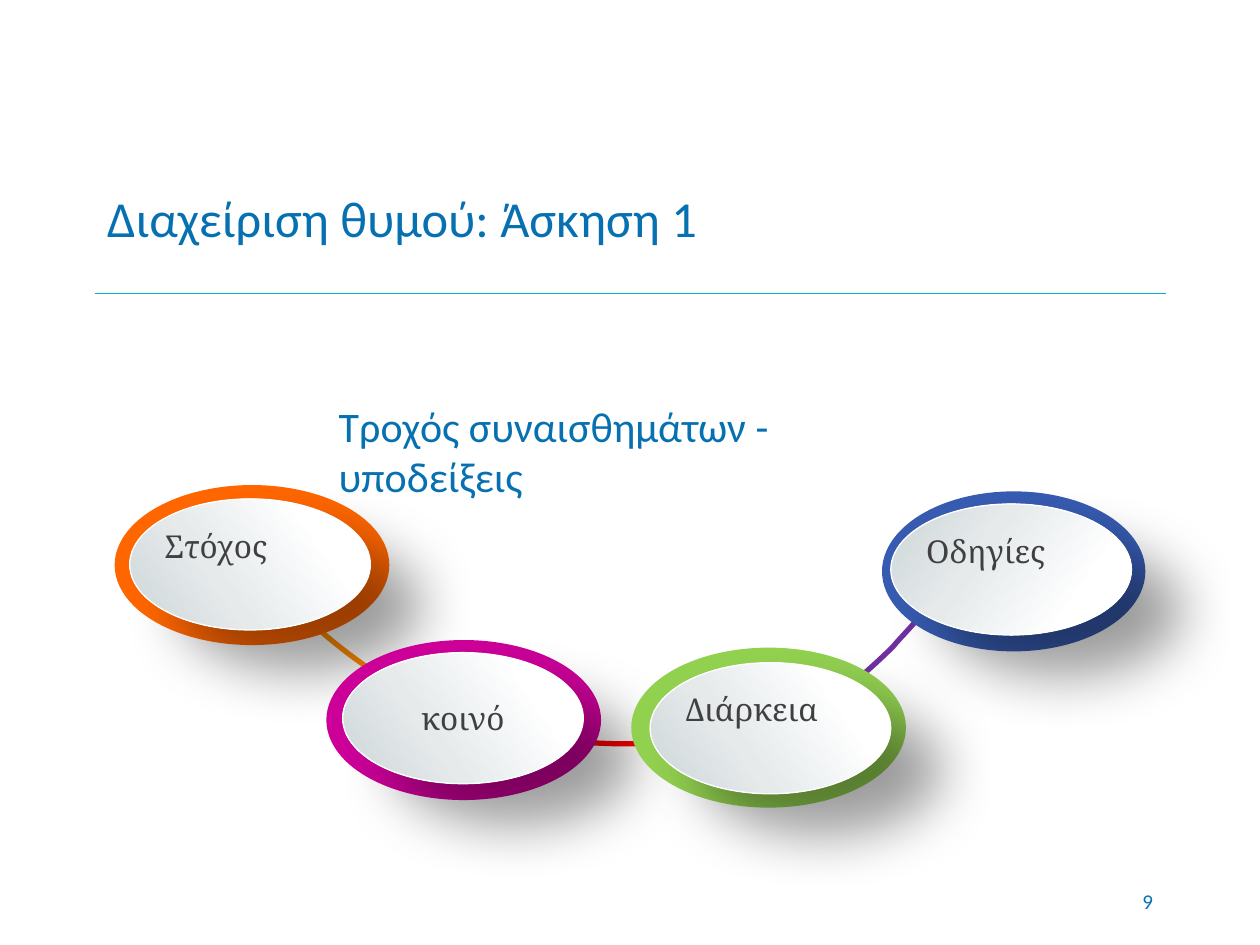
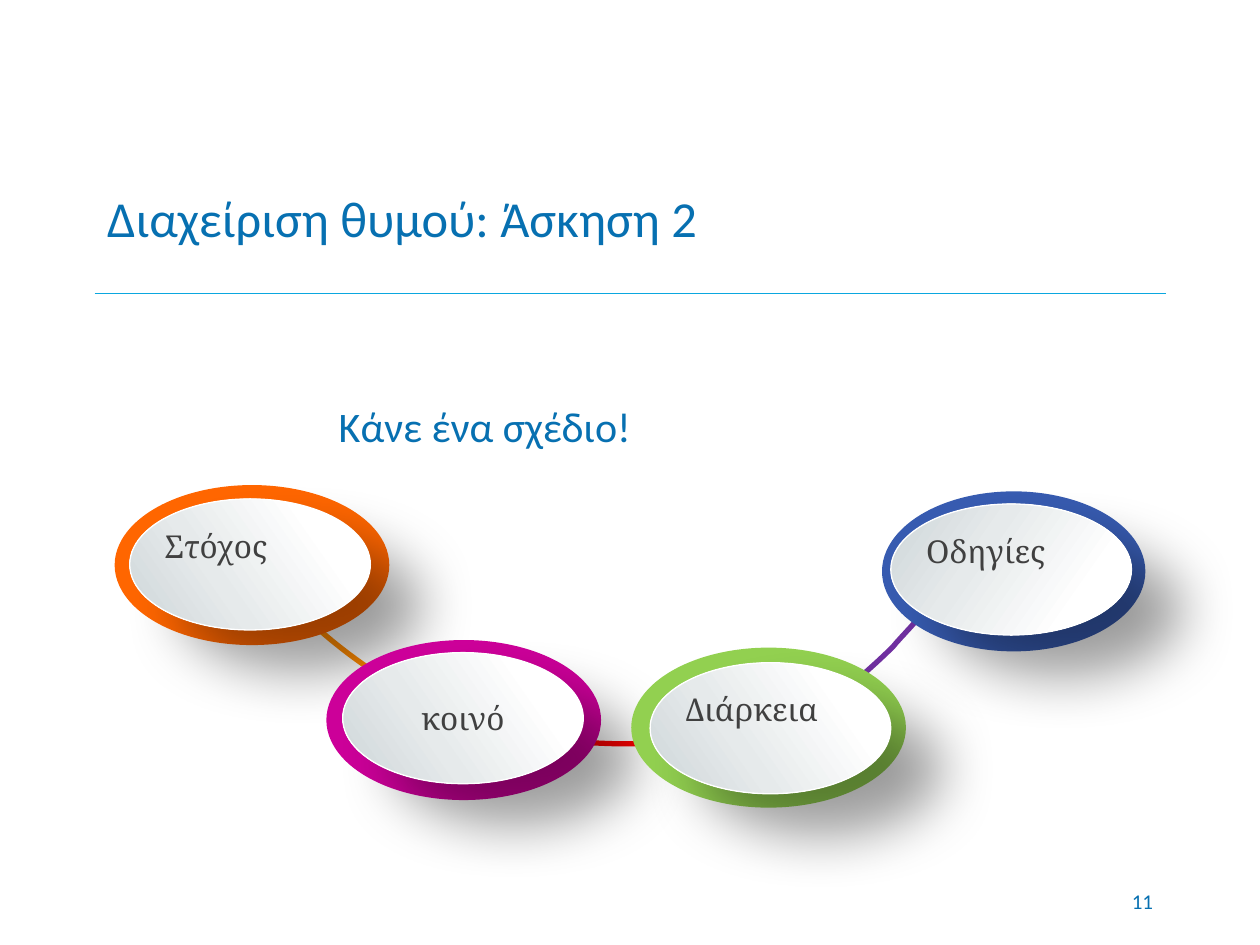
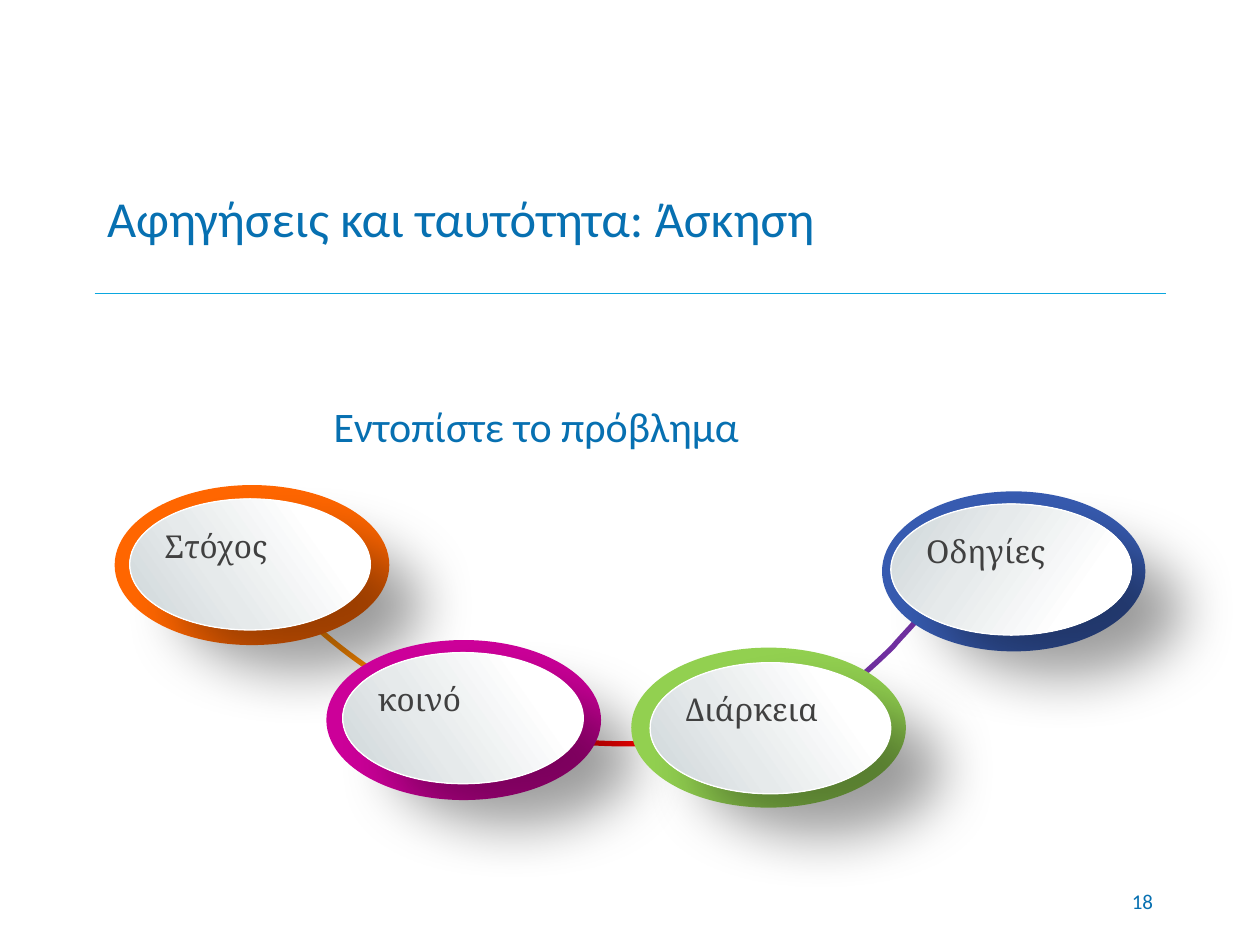
from dataclasses import dataclass

from lxml.etree import SubElement
from pptx import Presentation
from pptx.dml.color import RGBColor
from pptx.enum.shapes import MSO_CONNECTOR, MSO_SHAPE
from pptx.enum.text import MSO_ANCHOR, PP_ALIGN
from pptx.oxml.ns import qn
from pptx.util import Inches, Pt


@dataclass(frozen=True)
class Theme:
    heading: str = "0770B1"
    rule: str = "0BA7DF"
    label: str = "404040"
    white: str = "FFFFFF"
    shadow: str = "000000"
    heading_font: str = "Calibri"
    label_font: str = "Cambria"
    title_size: float = 28.8
    subtitle_size: float = 24
    label_size: float = 18
    number_size: float = 12


THEME = Theme()
# Gradient of an oval face: position in percent, colour
FACE_STOPS = [(0, "CDD5D8"), (37, "E6EAEB"), (77, "FFFFFF"), (100, "FFFFFF")]
FACE_SIZE = (1.91, 1.04)
CURVE_STEPS = 12

# Each link: colour, start point, then cubic segments (two controls and an end)
LINKS_BACK = [
    ("7030A0", (7.26, 4.94), [((7.2, 5.01), (7.13, 5.08), (7.09, 5.13)),
                              ((6.96, 5.26), (6.82, 5.38), (6.68, 5.5))]),
    ("7030A0", (6.68, 5.49), [((6.5, 5.61), (6.31, 5.71), (6.1, 5.79))]),
]
LINKS_FRONT = [
    ("FF0000", (4.49, 5.88), [((4.71, 5.9), (4.93, 5.91), (5.15, 5.9)),
                              ((5.26, 5.89), (5.37, 5.88), (5.48, 5.86))]),
    ("FF8A00", (2.47, 4.94), [((2.68, 5.14), (2.94, 5.32), (3.22, 5.5))]),
]
# Each oval: label, rim colour, rim box, face corner, mirrored
INSTRUCTIONS = ("Οδηγίες", "375BB0", (7, 3.9, 2.09, 1.27), (7.07, 4), False)
STEPS = [
    ("Στόχος", "FF6600", (0.91, 3.85, 2.18, 1.27), (1.03, 3.96), True),
    ("κοινό", "CC0099", (2.59, 5.08, 2.18, 1.27), (2.72, 5.18), True),
    ("Διάρκεια", "92D050", (5.01, 5.14, 2.18, 1.27), (5.16, 5.26), True),
]
# Links and ovals from back to front
WHEEL = [*LINKS_BACK, INSTRUCTIONS, *LINKS_FRONT, *STEPS]

# Each exercise: title, subtitle, subtitle box, page number, centred labels
EXERCISES = [
    ("Διαχείριση θυμού: Άσκηση 1", "Τροχός συναισθημάτων - υποδείξεις",
     (2.59, 3.13, 4.87, 1.55), "9", ["κοινό"]),
    ("Διαχείριση θυμού: Άσκηση 2", "Κάνε ένα σχέδιο!",
     (2.59, 3.13, 4.87, 1.09), "11", ["κοινό"]),
    ("Αφηγήσεις και ταυτότητα: Άσκηση", "Εντοπίστε το πρόβλημα",
     (2.55, 3.13, 4.87, 1.09), "18", []),
]


def write(shape, text, size, font=THEME.heading_font, color=THEME.heading,
          align=PP_ALIGN.LEFT, anchor=MSO_ANCHOR.MIDDLE,
          insets=(0.1, 0.05, 0.1, 0.05)):
    """Insets are left, top, right and bottom, in inches."""
    frame = shape.text_frame
    frame.word_wrap = True
    frame.vertical_anchor = anchor
    (frame.margin_left, frame.margin_top,
     frame.margin_right, frame.margin_bottom) = map(Inches, insets)
    paragraph = frame.paragraphs[0]
    paragraph.alignment = align
    run = paragraph.add_run()
    run.text = text
    run.font.size = Pt(size)
    run.font.name = font
    run.font.color.rgb = RGBColor.from_string(color)


def style_face(face, mirrored):
    """Give an oval face its gradient, white edge and soft shadow."""
    face.fill.gradient()
    face.fill.gradient_angle = 325
    stops = FACE_STOPS
    if mirrored:
        stops = [(100 - position, color) for position, color in reversed(stops)]
        face._element.spPr.xfrm.set("flipH", "1")
    stop_list = face._element.spPr.find(".//" + qn("a:gsLst"))
    for default_stop in list(stop_list):
        stop_list.remove(default_stop)
    for position, color in stops:
        stop = SubElement(stop_list, qn("a:gs"), pos=str(position * 1000))
        SubElement(stop, qn("a:srgbClr"), val=color)
    face.line.color.rgb = RGBColor.from_string(THEME.white)
    face.line.width = Pt(0.75)
    face.shadow.inherit = False
    effects = face._element.spPr.find(qn("a:effectLst"))
    shadow = SubElement(effects, qn("a:outerShdw"), blurRad=str(Pt(33)),
                        dist=str(Pt(36.7)), dir=str(39 * 60000),
                        algn="ctr", rotWithShape="0")
    shade = SubElement(shadow, qn("a:srgbClr"), val=THEME.shadow)
    SubElement(shade, qn("a:alpha"), val="38000")


deck = Presentation()
deck.slide_width, deck.slide_height = Inches(10), Inches(7.5)

for title, subtitle, subtitle_box, page, centred_labels in EXERCISES:
    slide = deck.slides.add_slide(deck.slide_layouts[5])
    shapes = slide.shapes

    heading = shapes.title
    heading.left, heading.top, heading.width, heading.height = map(
        Inches, (0.75, 1.58, 8.5, 0.75))
    write(heading, title, THEME.title_size, insets=(0.1, 0, 0.1, 0.46))

    rule = shapes.add_connector(MSO_CONNECTOR.STRAIGHT, Inches(0.75), Inches(2.33),
                                Inches(9.25), Inches(2.33))
    rule.line.color.rgb = RGBColor.from_string(THEME.rule)
    rule.line.width = Pt(1)
    SubElement(rule._element.spPr, qn("a:effectLst"))

    page_number = shapes.add_textbox(*map(Inches, (7.17, 6.95, 2.08, 0.4)))
    write(page_number, page, THEME.number_size, align=PP_ALIGN.RIGHT)

    for part in WHEEL:
        if len(part) == 3:
            color, start, segments = part
            points = [start]
            for control_1, control_2, end in segments:
                begin = points[-1]
                for step in range(1, CURVE_STEPS + 1):
                    t = step / CURVE_STEPS
                    points.append(tuple(
                        (1 - t) ** 3 * a + 3 * t * (1 - t) ** 2 * b
                        + 3 * t ** 2 * (1 - t) * c + t ** 3 * d
                        for a, b, c, d in zip(begin, control_1, control_2, end)))
            # Freeform points are whole numbers, so they are given in EMU
            curve = [(Inches(x), Inches(y)) for x, y in points]
            outline = shapes.build_freeform(*curve[0])
            outline.add_line_segments(curve[1:], close=False)
            link = outline.convert_to_shape()
            link.fill.background()
            link.line.color.rgb = RGBColor.from_string(color)
            link.line.width = Pt(3)
            link.shadow.inherit = False
            continue

        label, color, rim_box, face_corner, mirrored = part
        rim = shapes.add_shape(MSO_SHAPE.OVAL, *map(Inches, rim_box))
        rim.fill.solid()
        rim.fill.fore_color.rgb = RGBColor.from_string(color)
        rim.line.fill.background()
        rim.shadow.inherit = False
        face = shapes.add_shape(MSO_SHAPE.OVAL, *map(Inches, face_corner + FACE_SIZE))
        style_face(face, mirrored)
        centred = label in centred_labels
        write(face, label, THEME.label_size, font=THEME.label_font, color=THEME.label,
              align=PP_ALIGN.CENTER if centred else PP_ALIGN.LEFT,
              insets=(0, 0, 0, 0 if centred else 0.3))

    prompt = shapes.add_textbox(*map(Inches, subtitle_box))
    write(prompt, subtitle, THEME.subtitle_size, anchor=MSO_ANCHOR.TOP)

deck.save("out.pptx")
